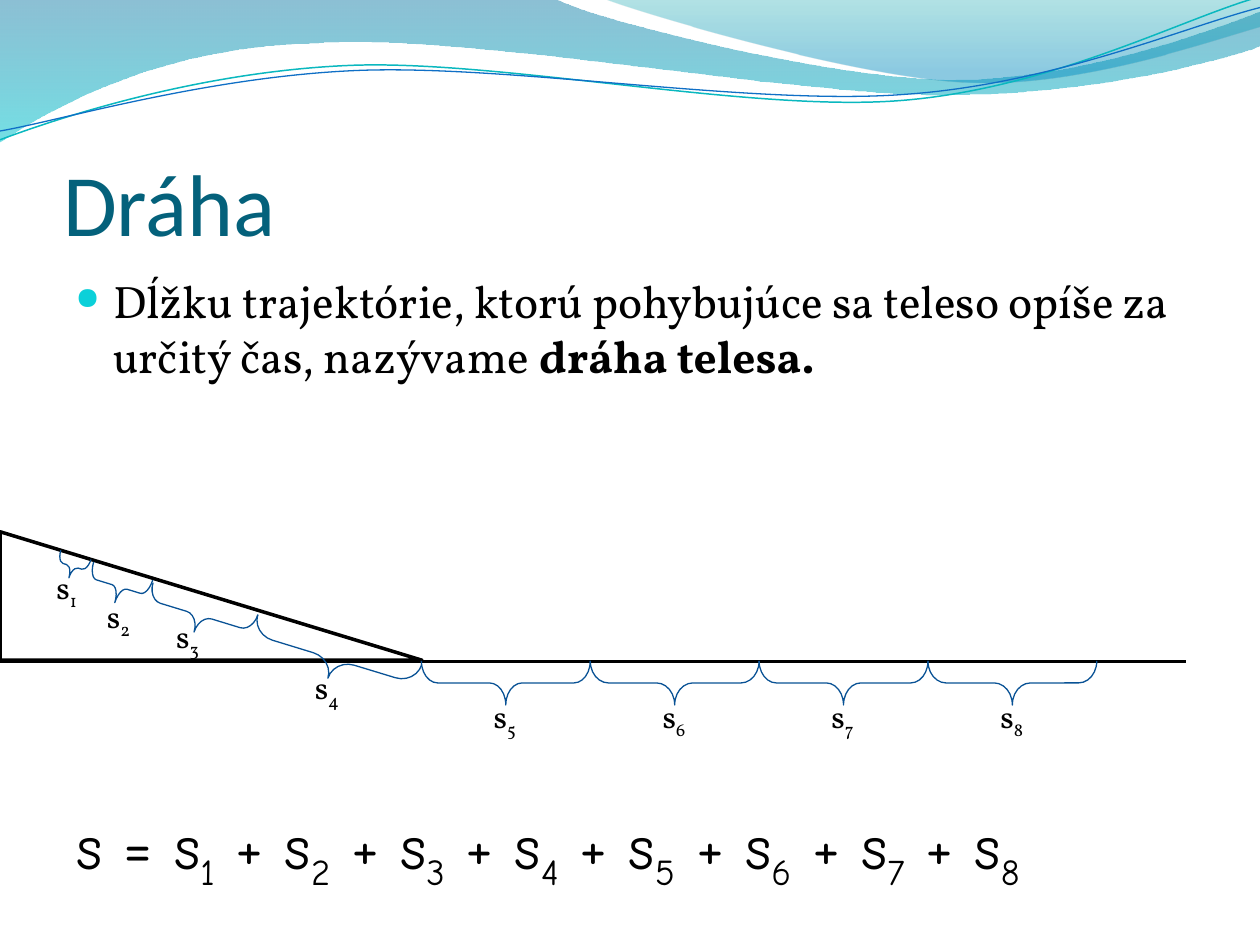
from lxml import etree
from pptx import Presentation
from pptx.dml.color import RGBColor
from pptx.enum import shapes, text
from pptx.oxml import ns
from pptx.util import Pt

PX = 9144  # EMU per px, 100 px to the inch
COLORS = {
    "title": "04617B", "ink": "000000", "paper": "FFFFFF", "bullet": "0BD0D9",
    "brace": "095295", "teal_line": "0AB8BF", "blue_line": "0F6FC6",
    "sea": "0074A1", "aqua": "00C6CF", "lagoon": "00A1A9", "sky": "008BBF",
}
TITLE_FONT = {"name": "Calibri", "size": Pt(50)}
BODY_FONT = {"name": "Vollkorn", "size": Pt(26)}
LABEL_FONT = {"name": "Vollkorn", "size": Pt(18)}
FORMULA_FONT = {"name": "Comic Neue", "size": Pt(36)}
TITLE_FRAME = {
    "margin_left": 0, "margin_right": 0, "margin_top": 5 * PX, "margin_bottom": 0,
    "vertical_anchor": text.MSO_ANCHOR.BOTTOM, "auto_size": text.MSO_AUTO_SIZE.NONE,
    "word_wrap": True,
}


def rgb(name):
    return RGBColor.from_string(COLORS[name])


def emu(*lengths):
    return [length * PX for length in lengths]


def apply(target, values):
    for name, value in values.items():
        setattr(target, name, value)


def add_run(paragraph, words, font, color="ink", bold=None, subscript=False):
    run = paragraph.add_run()
    run.text = words
    apply(run.font, {**font, "bold": bold})
    run.font.color.rgb = rgb(color)
    if subscript:
        run.font._element.set("baseline", "-25000")


def add_text(slide, box):
    frame = slide.shapes.add_textbox(*emu(*box)).text_frame
    frame.word_wrap = True
    return frame.paragraphs[0]


def set_line(shape, color, width):
    shape.line.color.rgb = rgb(color)
    shape.line.width = Pt(width)


# Header waves
def add_wave(slide, origin, start, segments, closed):
    """Outline of lines (2 numbers) and cubic curves (6 numbers)."""
    left, top = origin
    points = [start] + [(part[i], part[i + 1]) for part in segments
                        for i in range(0, len(part), 2)]
    first, *rest = [emu(left + x, top + y) for x, y in points]
    builder = slide.shapes.build_freeform(*first)
    builder.add_line_segments(rest, close=closed)
    wave = builder.convert_to_shape()
    wave.shadow.inherit = False

    # Merge the three points of each curve into one Bézier step
    steps = iter(list(wave._element.spPr.iter(ns.qn("a:lnTo"))))
    for part in segments:
        step = next(steps)
        if len(part) == 6:
            curve = etree.Element(ns.qn("a:cubicBezTo"))
            step.addprevious(curve)
            for corner in (step, next(steps), next(steps)):
                curve.append(corner[0])
                corner.getparent().remove(corner)
    return wave


def fill_gradient(shape, stops):
    shape.line.fill.background()
    shape.fill.gradient()
    shape.fill.gradient_angle = 270
    for stop, (position, color, _) in zip(shape.fill.gradient_stops, stops):
        stop.position = position
        stop.color.rgb = rgb(color)
    for node, (_, _, opacity) in zip(shape._element.spPr.iter(ns.qn("a:srgbClr")), stops):
        etree.SubElement(node, ns.qn("a:alpha"), val=str(opacity * 1000))


def add_header(slide, origin):
    bands = [
        ((0, 0), [(440, -1), (476, 17, 664, 63, 758, 63), (853, 63, 958, 26, 1000, 9),
                  (1001, 36), (983, 44, 870, 76, 746, 75), (622, 75, 382, 28, 257, 34),
                  (129, 36, 46, 83, -1, 113)],
         [(0, "sea", 45), (1, "aqua", 55)]),
        ((479, -1), [(509, 11, 682, 62, 769, 65), (856, 69, 961, 32, 1000, 21), (1000, 0)],
         [(0, "lagoon", 30), (0.8, "sky", 45)]),
    ]
    for start, segments, stops in bands:
        fill_gradient(add_wave(slide, origin, start, segments, True), stops)
    strands = [
        ((0, 111), [(48, 93, 158, 57, 277, 52), (395, 47, 593, 89, 713, 80),
                    (833, 71, 938, 15, 998, -2)], "teal_line", 0.85),
        ((0, 104), [(47, 96, 164, 61, 283, 56), (403, 51, 597, 84, 717, 75),
                    (836, 67, 941, 21, 1000, 6)], "blue_line", 0.75),
    ]
    for start, segments, color, width in strands:
        strand = add_wave(slide, origin, start, segments, False)
        strand.fill.background()
        set_line(strand, color, width)


# Title and definition
def add_title(slide, box):
    title = slide.shapes.title
    apply(title, dict(zip(("left", "top", "width", "height"), emu(*box))))
    apply(title.text_frame, TITLE_FRAME)
    heading = title.text_frame.paragraphs[0]
    heading.alignment = text.PP_ALIGN.LEFT
    add_run(heading, "Dráha", TITLE_FONT, "title")


def add_definition(slide, box):
    definition = add_text(slide, box)
    definition.space_before = Pt(5)
    props = definition._p.get_or_add_pPr()
    props.set("marL", str(30 * PX))
    props.set("indent", str(-30 * PX))
    color = etree.SubElement(props, ns.qn("a:buClr"))
    etree.SubElement(color, ns.qn("a:srgbClr"), val=COLORS["bullet"])
    etree.SubElement(props, ns.qn("a:buSzPct"), val="68000")
    etree.SubElement(props, ns.qn("a:buChar"), char="●")
    add_run(definition, "Dĺžku trajektórie, ktorú pohybujúce sa teleso opíše za určitý čas, nazývame ",
            BODY_FONT)
    add_run(definition, "dráha telesa.", BODY_FONT, bold=True)


# Inclined plane with the partial paths
def add_brace(slide, box, rotation, bend, tip=0.5):
    brace = slide.shapes.add_shape(shapes.MSO_SHAPE.LEFT_BRACE, *emu(*box))
    brace.rotation = rotation
    brace.adjustments[0], brace.adjustments[1] = bend, tip
    brace.shadow.inherit = False
    brace.fill.background()
    set_line(brace, "brace", 0.75)


def add_label(slide, box, number):
    label = add_text(slide, box)
    add_run(label, "s", LABEL_FONT)
    add_run(label, str(number), LABEL_FONT, subscript=True)


def add_diagram(slide, box):
    left, top, width, height = box
    slope = slide.shapes.add_shape(shapes.MSO_SHAPE.RIGHT_TRIANGLE,
                                   *emu(left, top, 335, height - 1))
    slope.shadow.inherit = False
    slope.fill.solid()
    slope.fill.fore_color.rgb = rgb("paper")
    set_line(slope, "ink", 2)

    ground = slide.shapes.add_connector(
        shapes.MSO_CONNECTOR.STRAIGHT,
        *emu(left, top + height, left + width, top + height))
    set_line(ground, "ink", 2)
    etree.SubElement(ground._element.spPr, ns.qn("a:effectLst"))

    # On the slope: brace box, bend, tip and label corner
    slope_parts = [
        ((48, 15, 19, 25), 0.25, 0.5, (35, 24)),
        ((81, 19, 26, 49), 0.24, 0.52, (75, 47)),
        ((145, 23, 28, 87), 0.37, 0.49, (130, 63)),
        ((249, 33, 32, 136), 0.53, 0.5, (240, 103)),
    ]
    for number, ((x, y, w, h), bend, tip, (label_x, label_y)) in enumerate(slope_parts, 1):
        add_brace(slide, (left + x, top + y, w, h), 287, bend, tip)
        add_label(slide, (left + label_x, top + label_y, 47, 40), number)

    # On the ground: equal lengths
    for i, bend in enumerate((0.37, 0.41, 0.39, 0.41)):
        x = left + 384 + 134 * i
        add_brace(slide, (x, top + 53, 35, 134), 270, bend)
        add_label(slide, (x - 2, top + 126, 55, 40), i + 5)


# Sum of the partial paths
def add_formula(slide, box):
    formula = add_text(slide, box)
    for number in range(1, 9):
        add_run(formula, "s = s" if number == 1 else " + s", FORMULA_FONT)
        add_run(formula, str(number), FORMULA_FONT, subscript=True)


def main():
    deck = Presentation()
    deck.slide_width, deck.slide_height = emu(1000, 750)
    slide = deck.slides.add_slide(deck.slide_layouts[5])
    add_header(slide, (0, 0))
    add_title(slide, (50, 77, 900, 125))
    add_definition(slide, (50, 212, 900, 116))
    add_diagram(slide, (0, 422, 941, 103))
    add_formula(slide, (51, 635, 882, 71))
    deck.save("out.pptx")


if __name__ == "__main__":
    main()
